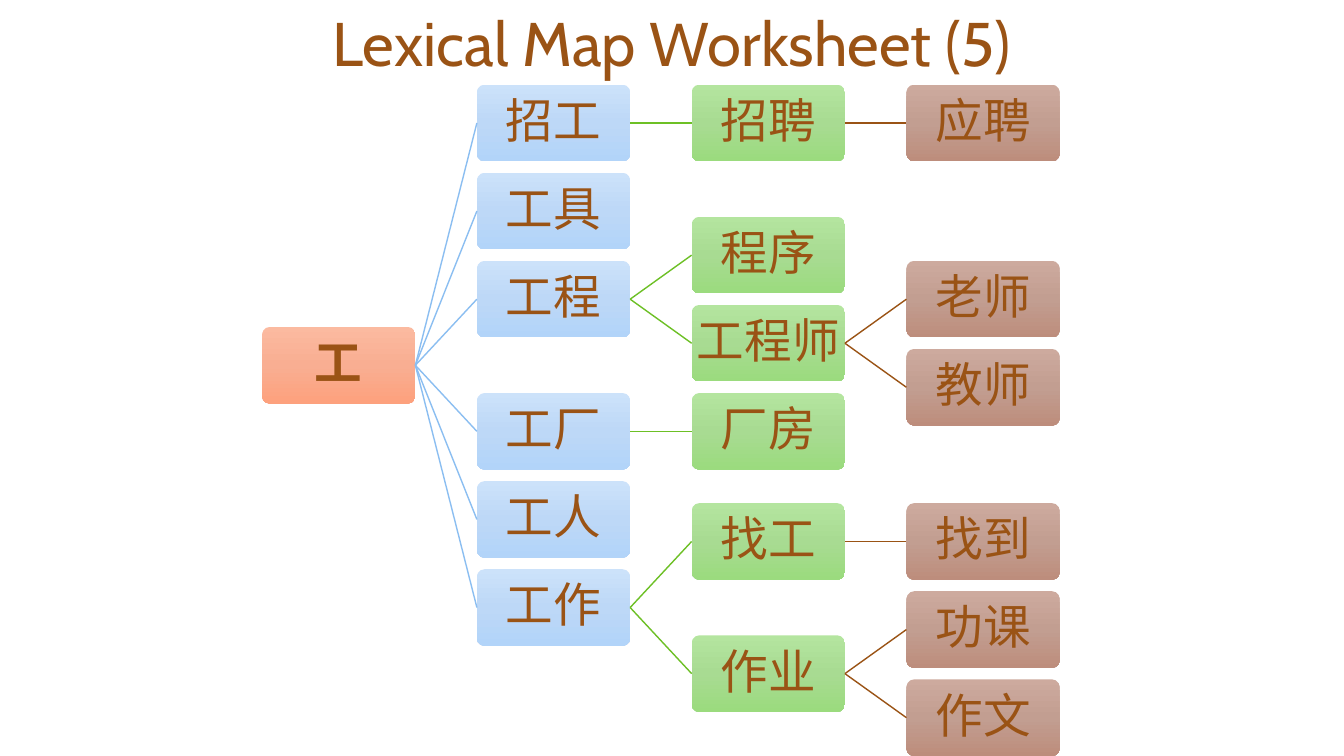
"""Build the lexical map worksheet slide, a word tree growing from left to right."""
from copy import deepcopy
from dataclasses import dataclass

from lxml.etree import SubElement
from pptx import Presentation
from pptx.dml.color import RGBColor
from pptx.enum.shapes import MSO_CONNECTOR, MSO_SHAPE
from pptx.enum.text import MSO_ANCHOR, PP_ALIGN
from pptx.oxml.ns import qn
from pptx.shapes.autoshape import Shape
from pptx.slide import Slide
from pptx.text.text import TextFrame
from pptx.util import Inches, Pt

FONT = "Cabin"
BROWN = RGBColor(0x9A, 0x53, 0x15)
BLUE = RGBColor(0x8B, 0xBE, 0xF1)
GREEN = RGBColor(0x6D, 0xC0, 0x25)
CORAL_SHADES = (RGBColor(0xFB, 0xBA, 0xA0), RGBColor(0xF9, 0xAE, 0x92), RGBColor(0xFD, 0xA1, 0x7D))
BLUE_SHADES = (RGBColor(0xCC, 0xE2, 0xFA), RGBColor(0xBD, 0xD8, 0xF7), RGBColor(0xB2, 0xD4, 0xF9))
GREEN_SHADES = (RGBColor(0xB4, 0xE5, 0x9F), RGBColor(0xA8, 0xDB, 0x92), RGBColor(0x9B, 0xDB, 0x7E))
BROWN_SHADES = (RGBColor(0xCD, 0xAA, 0x9E), RGBColor(0xC2, 0x9E, 0x91), RGBColor(0xBD, 0x8D, 0x7C))

LEFT, TOP = 2.6, 0.84
BOX_WIDTH, BOX_HEIGHT = 1.52, 0.76
COLUMN_STEP = 2.13
LAST_ROW = 6.75
ROW_STEP = (7.5 - BOX_HEIGHT - TOP) / LAST_ROW
INSET = Inches(0.02)
LEFT_SIDE, RIGHT_SIDE = 1, 3


@dataclass(frozen=True)
class Level:
    """Look of one column and of the lines that lead into it."""
    shades: tuple[RGBColor, RGBColor, RGBColor]
    line: RGBColor


@dataclass(frozen=True)
class Word:
    """A word, its row in the map and the words that branch from it."""
    text: str
    row: float
    branches: tuple["Word", ...] = ()


LEVELS = (
    Level(CORAL_SHADES, BROWN),
    Level(BLUE_SHADES, BLUE),
    Level(GREEN_SHADES, GREEN),
    Level(BROWN_SHADES, BROWN),
)

WORD_MAP = Word("工", 2.75, (
    Word("招工", 0, (Word("招聘", 0, (Word("应聘", 0),)),)),
    Word("工具", 1),
    Word("工程", 2, (
        Word("程序", 1.5),
        Word("工程师", 2.5, (Word("老师", 2), Word("教师", 3))),
    )),
    Word("工厂", 3.5, (Word("厂房", 3.5),)),
    Word("工人", 4.5),
    Word("工作", 5.5, (
        Word("找工", 4.75, (Word("找到", 4.75),)),
        Word("作业", 6.25, (Word("功课", 5.75), Word("作文", LAST_ROW))),
    )),
))


def write_text(frame: TextFrame, text: str, size: int, bold: bool = False) -> None:
    """Write one centred brown paragraph."""
    frame.text = text
    frame.word_wrap = True
    para = frame.paragraphs[0]
    para.alignment = PP_ALIGN.CENTER
    font = para.runs[0].font
    font.name = FONT
    font.size = Pt(size)
    font.bold = bold
    font.color.rgb = BROWN


def fill_shades(box: Shape, shades: tuple[RGBColor, RGBColor, RGBColor]) -> None:
    """Fill a box with three evenly spaced shades from top to bottom."""
    box.fill.gradient()
    box.fill.gradient_angle = 270
    stop_list = box._element.spPr.find(f".//{qn('a:gsLst')}")
    stop_list.insert(1, deepcopy(stop_list[0]))
    for index, (stop, shade) in enumerate(zip(box.fill.gradient_stops, shades)):
        stop.position = index / 2
        stop.color.rgb = shade


def draw_box(slide: Slide, word: Word, depth: int) -> Shape:
    """Draw the rounded box of one word."""
    box = slide.shapes.add_shape(
        MSO_SHAPE.ROUNDED_RECTANGLE,
        Inches(LEFT + depth * COLUMN_STEP), Inches(TOP + word.row * ROW_STEP),
        Inches(BOX_WIDTH), Inches(BOX_HEIGHT),
    )
    box.adjustments[0] = 0.1
    box.shadow.inherit = False
    box.line.fill.background()
    fill_shades(box, LEVELS[depth].shades)
    frame = box.text_frame
    frame.margin_left = frame.margin_right = frame.margin_top = frame.margin_bottom = INSET
    frame.vertical_anchor = MSO_ANCHOR.MIDDLE
    write_text(frame, word.text, 34, bold=depth == 0)
    frame.paragraphs[0].line_spacing = 0.9
    return box


def join_boxes(slide: Slide, parent: Shape, child: Shape, color: RGBColor) -> None:
    """Join the right side of a box to the left side of its branch."""
    link = slide.shapes.add_connector(MSO_CONNECTOR.STRAIGHT, 0, 0, 0, 0)
    link.begin_connect(parent, RIGHT_SIDE)
    link.end_connect(child, LEFT_SIDE)
    link.line.color.rgb = color
    link.line.width = Pt(1)
    SubElement(link._element.spPr, qn("a:effectLst"))


def draw_branch(slide: Slide, word: Word, depth: int = 0) -> Shape:
    """Draw a word with everything that branches from it."""
    box = draw_box(slide, word, depth)
    for branch in word.branches:
        child = draw_branch(slide, branch, depth + 1)
        join_boxes(slide, box, child, LEVELS[depth + 1].line)
    return box


def main() -> None:
    """Build and save the deck."""
    deck = Presentation()
    deck.slide_width, deck.slide_height = Inches(13.33), Inches(7.5)
    page = deck.slides.add_slide(deck.slide_layouts[6])
    draw_branch(page, WORD_MAP)
    title = page.shapes.add_textbox(0, 0, deck.slide_width, Inches(1.08))
    write_text(title.text_frame, "Lexical Map Worksheet (5)", 44)
    deck.save("out.pptx")


if __name__ == "__main__":
    main()
